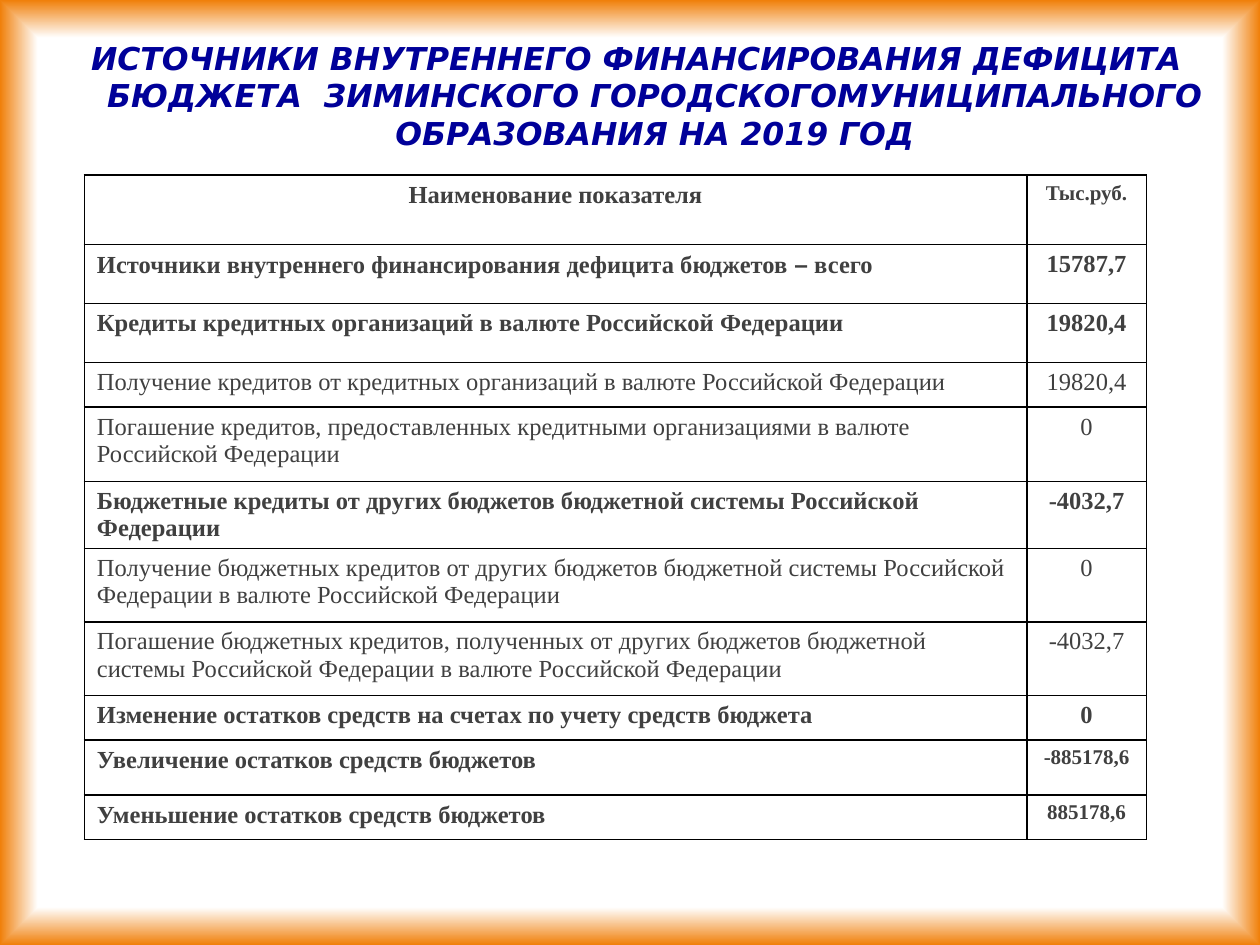
from lxml import etree
from pptx import Presentation
from pptx.dml.color import RGBColor
from pptx.enum.text import MSO_ANCHOR, MSO_AUTO_SIZE, PP_ALIGN
from pptx.oxml import parse_xml
from pptx.oxml.ns import qn
from pptx.util import Cm, Pt

LEFT, MID = PP_ALIGN.LEFT, PP_ALIGN.CENTER
TOP, FIXED = MSO_ANCHOR.TOP, MSO_AUTO_SIZE.NONE
SPACE = (
    'xmlns:a="http://schemas.openxmlformats.org/drawingml/2006/main" '
    'xmlns:p="http://schemas.openxmlformats.org/presentationml/2006/main"'
)
COLORS = {"head": "000099", "text": "404040", "line": "000000",
          "page": "FFFFFF", "glow": "F07F09"}
FONTS = {"head": "DejaVu Sans", "text": "Times New Roman", "dash": "Arial"}

HEAD = ("ИСТОЧНИКИ ВНУТРЕННЕГО ФИНАНСИРОВАНИЯ ДЕФИЦИТА БЮДЖЕТА  ЗИМИНСКОГО "
        "ГОРОДСКОГОМУНИЦИПАЛЬНОГО ОБРАЗОВАНИЯ НА 2019 ГОД")
COLS = [19, 2.41]
ROWS = [
    (1.4, True, 12, "Наименование показателя", "Тыс.руб."),
    (1.19, True, 14,
     "Источники внутреннего финансирования дефицита бюджетов – всего", "15787,7"),
    (1.19, True, 14,
     "Кредиты кредитных организаций в валюте Российской Федерации", "19820,4"),
    (0.9, False, 14,
     "Получение кредитов от кредитных организаций в валюте Российской Федерации",
     "19820,4"),
    (1.5, False, 14,
     "Погашение кредитов, предоставленных кредитными организациями в валюте "
     "Российской Федерации", "0"),
    (0.9, True, 14,
     "Бюджетные кредиты от других бюджетов бюджетной системы Российской Федерации",
     "-4032,7"),
    (1.48, False, 14,
     "Получение бюджетных кредитов от других бюджетов бюджетной системы "
     "Российской Федерации в валюте Российской Федерации", "0"),
    (1.48, False, 14,
     "Погашение бюджетных кредитов, полученных от других бюджетов бюджетной "
     "системы Российской Федерации в валюте Российской Федерации", "-4032,7"),
    (0.9, True, 14,
     "Изменение остатков средств на счетах по учету средств бюджета", "0"),
    (1.11, True, 12, "Увеличение остатков средств бюджетов", "-885178,6"),
    (0.9, True, 12, "Уменьшение остатков средств бюджетов", "885178,6"),
]


class Page:
    def __init__(self, deck):
        self.slide = deck.slides.add_slide(deck.slide_layouts[5])

    def style(self, run, size, bold, kind="text", italic=False):
        font = run.font
        font.name = FONTS[kind]
        font.size = Pt(size)
        font.bold = bold
        font.italic = italic
        tone = COLORS["head" if kind == "head" else "text"]
        font.color.rgb = RGBColor.from_string(tone)

    def back(self):
        stops = "".join(
            f'<a:gs pos="{pos}000"><a:srgbClr val="{COLORS[name]}"/></a:gs>'
            for pos, name in [(0, "page"), (92, "page"), (100, "glow")])
        root = self.slide.element.cSld
        root.insert(0, parse_xml(
            f'<p:bg {SPACE}><p:bgPr><a:gradFill rotWithShape="1">'
            f'<a:gsLst>{stops}</a:gsLst><a:path path="shape">'
            '<a:fillToRect l="50000" t="50000" r="50000" b="50000"/></a:path>'
            '</a:gradFill><a:effectLst/></p:bgPr></p:bg>'))

    def title(self, text, left, top, width, height):
        shape = self.slide.shapes.title
        shape.left, shape.top = Cm(left), Cm(top)
        shape.width, shape.height = Cm(width), Cm(height)
        frame = shape.text_frame
        frame.text = text
        frame.word_wrap = True
        frame.auto_size = FIXED
        frame.vertical_anchor = TOP
        frame.margin_left, frame.margin_right = Cm(0.51), Cm(0.25)
        frame.margin_top, frame.margin_bottom = Cm(0.25), Cm(0.13)
        para = frame.paragraphs[0]
        para.alignment = MID
        para.space_before = Pt(2.5)
        props = para._p.get_or_add_pPr()
        props.set("marL", str(Cm(0.74)))
        props.set("indent", str(Cm(-0.74)))
        self.style(para.runs[0], 18, True, "head", True)

    def edge(self, cell):
        props = cell._tc.get_or_add_tcPr()
        for spot, side in enumerate("LRTB"):
            line = etree.Element(qn(f"a:ln{side}"), w=str(Pt(1)))
            fill = etree.SubElement(line, qn("a:solidFill"))
            etree.SubElement(fill, qn("a:srgbClr"), val=COLORS["line"])
            props.insert(spot, line)

    def cell(self, cell, text, size, bold, align):
        cell.fill.background()
        self.edge(cell)
        para = cell.text_frame.paragraphs[0]
        para.alignment = align
        start, dash, rest = text.partition("–")
        for part in filter(None, (start, dash, rest)):
            run = para.add_run()
            run.text = part
            self.style(run, size, bold, "dash" if part == "–" else "text")

    def table(self, rows, cols, left, top):
        high = sum(row[0] for row in rows)
        grid = self.slide.shapes.add_table(
            len(rows), len(cols), Cm(left), Cm(top), Cm(sum(cols)), Cm(high)).table
        for col, width in zip(grid.columns, cols):
            col.width = Cm(width)
        for num, (height, bold, size, name, value) in enumerate(rows):
            grid.rows[num].height = Cm(height)
            self.cell(grid.cell(num, 0), name, 14, bold, LEFT if num else MID)
            self.cell(grid.cell(num, 1), value, size, bold, MID)


def main():
    deck = Presentation()
    deck.slide_width, deck.slide_height = Cm(25.4), Cm(19.05)
    page = Page(deck)
    page.back()
    page.title(HEAD, 0, 0.53, 25.4, 2.8)
    page.table(ROWS, COLS, 1.7, 3.53)
    deck.save("out.pptx")


if __name__ == "__main__":
    main()
